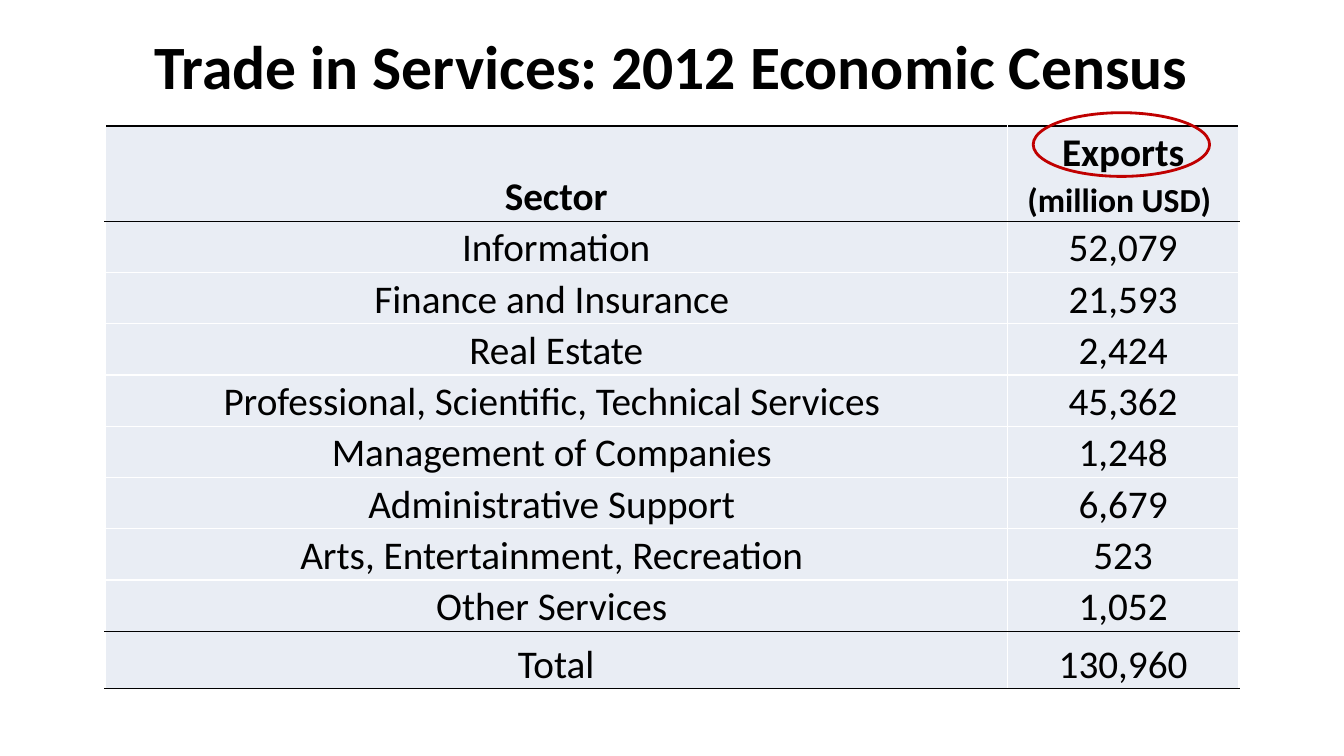
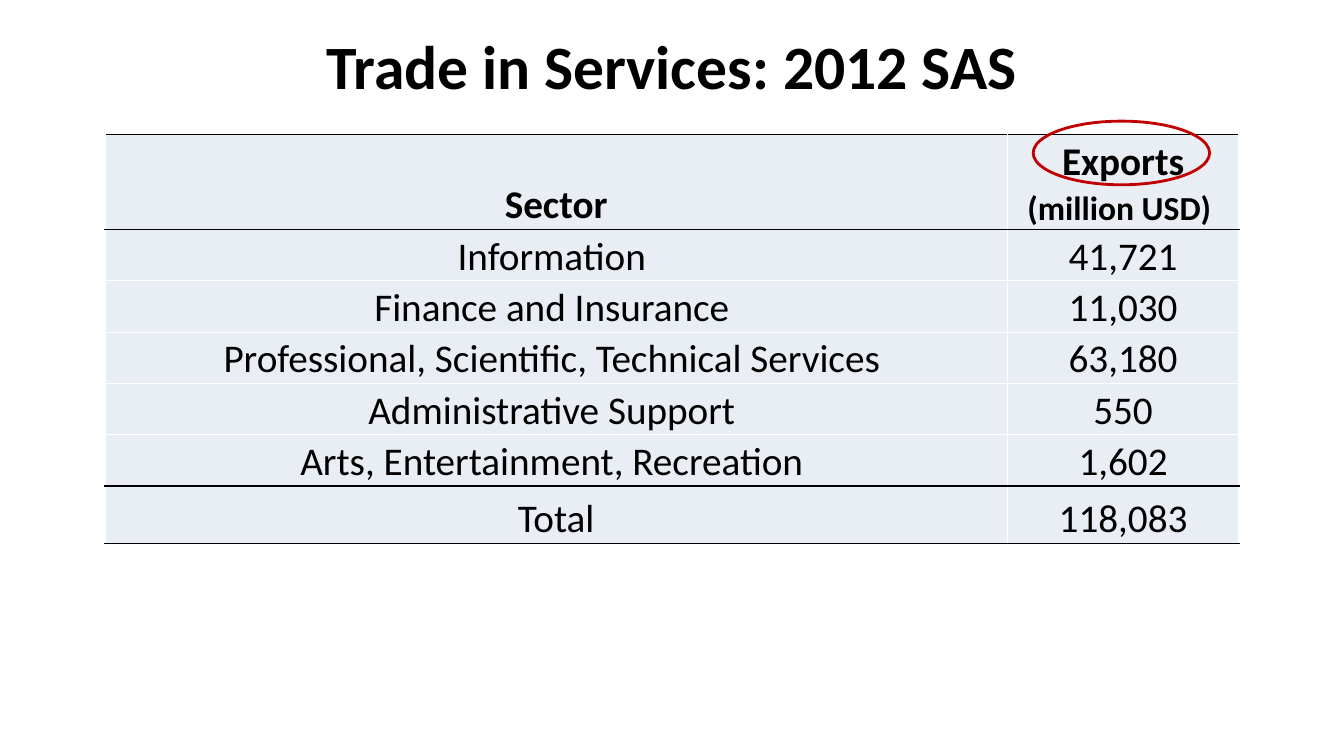
import pptx
import pptx.dml.color
import pptx.enum.shapes
import pptx.enum.text
import pptx.oxml
import pptx.oxml.ns
import pptx.util

Pt = pptx.util.Pt
RGBColor = pptx.dml.color.RGBColor
MIDDLE = pptx.enum.text.MSO_ANCHOR.MIDDLE
BOTTOM = pptx.enum.text.MSO_ANCHOR.BOTTOM
CENTER = pptx.enum.text.PP_ALIGN.CENTER
OVAL = pptx.enum.shapes.MSO_SHAPE.OVAL

BLACK = RGBColor(0x00, 0x00, 0x00)
WHITE = RGBColor(0xFF, 0xFF, 0xFF)
PALE_BLUE = RGBColor(0xE9, 0xED, 0xF4)
RED = RGBColor(0xC0, 0x00, 0x00)

HEADER = ("Sector", "Exports\n(million USD) ")

CENSUS_ROWS = [
    ("Information", "52,079"),
    ("Finance and Insurance ", "21,593"),
    ("Real Estate", "2,424"),
    ("Professional, Scientific, Technical Services ", "45,362"),
    ("Management of Companies ", "1,248"),
    ("Administrative Support ", "6,679"),
    ("Arts, Entertainment, Recreation ", "523"),
    ("Other Services ", "1,052"),
    ("Total", "130,960"),
]

SAS_ROWS = [
    ("Information ", "41,721"),
    ("Finance and Insurance ", "11,030"),
    ("Professional, Scientific, Technical Services ", "63,180"),
    ("Administrative Support ", "550"),
    ("Arts, Entertainment, Recreation ", "1,602"),
    ("Total", "118,083"),
]


class Deck:
    font_name = "Calibri"
    title_size = 44
    body_size = 28
    unit_size = 24
    line_spacing = 1.07
    table_left = 75
    column_widths = (644.5, 165.5)
    header_height, body_height, total_height = 68, 36.6, 41

    def __init__(self):
        self.presentation = pptx.Presentation()
        self.presentation.slide_width = Pt(960)
        self.presentation.slide_height = Pt(540)
        self.slide = None

    def format_paragraph(self, paragraph, size, bold):
        paragraph.alignment = CENTER
        for run in paragraph.runs:
            run.font.name = self.font_name
            run.font.size = Pt(size)
            run.font.bold = bold
            run.font.color.rgb = BLACK

    def add_slide(self, title):
        layout = self.presentation.slide_layouts.get_by_name("Title Only")
        self.slide = self.presentation.slides.add_slide(layout)
        shape = self.slide.shapes.title
        shape.left, shape.top = Pt(48), Pt(12)
        shape.width, shape.height = Pt(864), Pt(68.5)
        shape.text_frame.text = title
        shape.text_frame.vertical_anchor = MIDDLE
        self.format_paragraph(shape.text_frame.paragraphs[0], self.title_size, True)

    def add_border(self, cell, side, color):
        namespace = pptx.oxml.ns.nsdecls("a")
        cell._tc.get_or_add_tcPr().append(pptx.oxml.parse_xml(
            f'<a:{side} {namespace} w="{Pt(1)}"><a:solidFill>'
            f'<a:srgbClr val="{color}"/></a:solidFill></a:{side}>'))

    def format_cell(self, cell, text, row_index, total_index):
        cell.margin_left = cell.margin_right = Pt(5)
        cell.margin_top = cell.margin_bottom = 0
        cell.vertical_anchor = BOTTOM
        top = BLACK if row_index in (0, 1, total_index) else WHITE
        bottom = BLACK if row_index in (0, total_index - 1, total_index) else WHITE
        for side, color in (("lnL", WHITE), ("lnR", WHITE), ("lnT", top), ("lnB", bottom)):
            self.add_border(cell, side, color)
        cell.fill.solid()
        cell.fill.fore_color.rgb = PALE_BLUE
        cell.text_frame.text = text
        for index, paragraph in enumerate(cell.text_frame.paragraphs):
            size = self.unit_size if index else self.body_size
            self.format_paragraph(paragraph, size, row_index == 0)
            paragraph.line_spacing = self.line_spacing

    def add_table(self, top, body_rows):
        rows = [HEADER, *body_rows]
        total_index = len(rows) - 1
        heights = [self.header_height] + [self.body_height] * (total_index - 1) + [self.total_height]
        table = self.slide.shapes.add_table(
            len(rows), len(HEADER), Pt(self.table_left), Pt(top),
            Pt(sum(self.column_widths)), Pt(sum(heights))).table
        table.first_row = table.horz_banding = False
        for column, width in zip(table.columns, self.column_widths):
            column.width = Pt(width)
        for row_index, texts in enumerate(rows):
            table.rows[row_index].height = Pt(heights[row_index])
            for cell, text in zip(table.rows[row_index].cells, texts):
                self.format_cell(cell, text, row_index, total_index)

    def add_highlight(self, top):
        shape = self.slide.shapes.add_shape(OVAL, Pt(738), Pt(top), Pt(126), Pt(45.5))
        shape.shadow.inherit = False
        shape.fill.background()
        shape.line.color.rgb = RED
        shape.line.width = Pt(2)

    def add_trade_slide(self, title, table_top, body_rows):
        self.add_slide(title)
        self.add_table(table_top, body_rows)
        self.add_highlight(table_top - 9.5)


def main():
    deck = Deck()
    deck.add_trade_slide("Trade in Services: 2012 Economic Census", 90, CENSUS_ROWS)
    deck.add_trade_slide("Trade in Services: 2012 SAS", 96, SAS_ROWS)
    deck.presentation.save("out.pptx")


if __name__ == "__main__":
    main()
